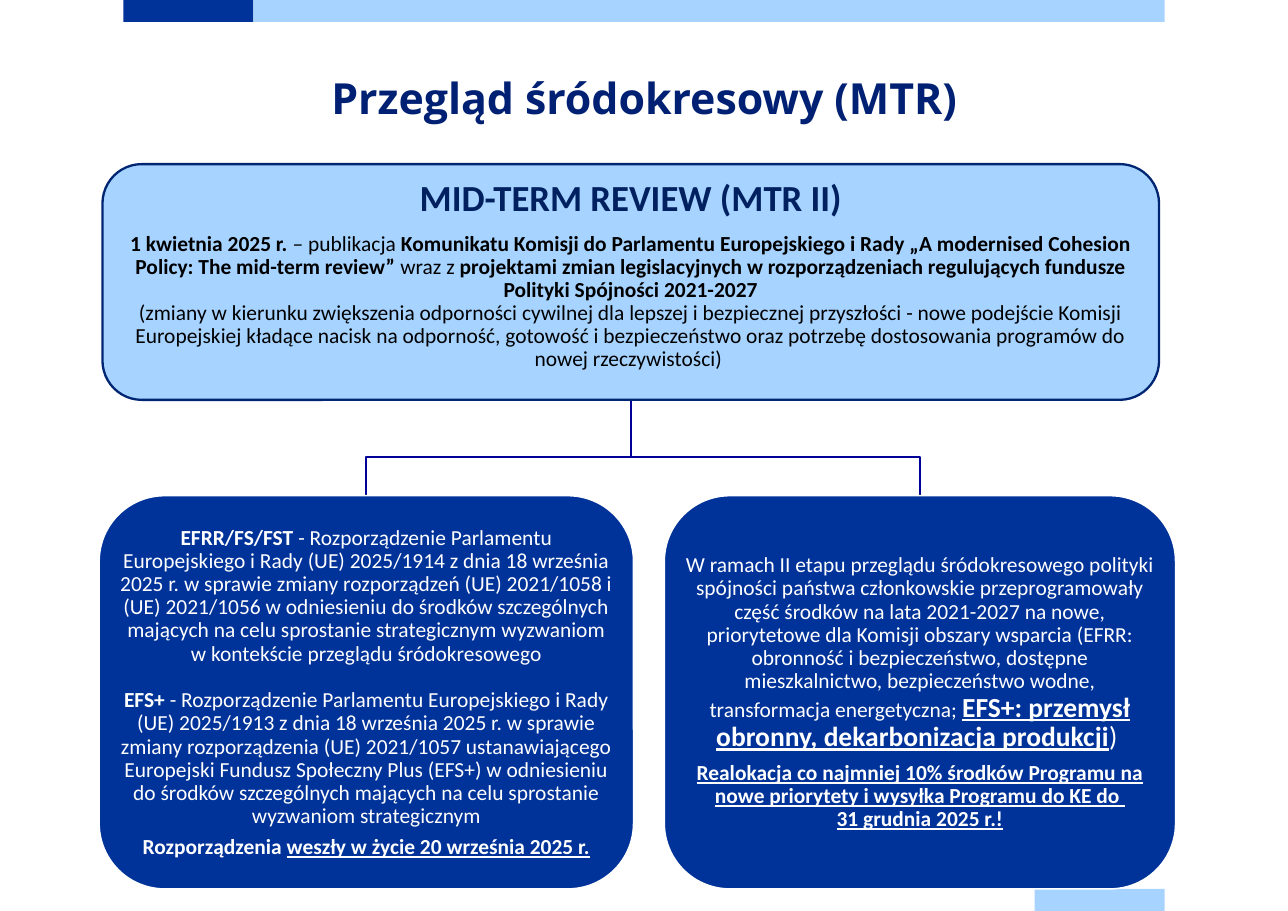
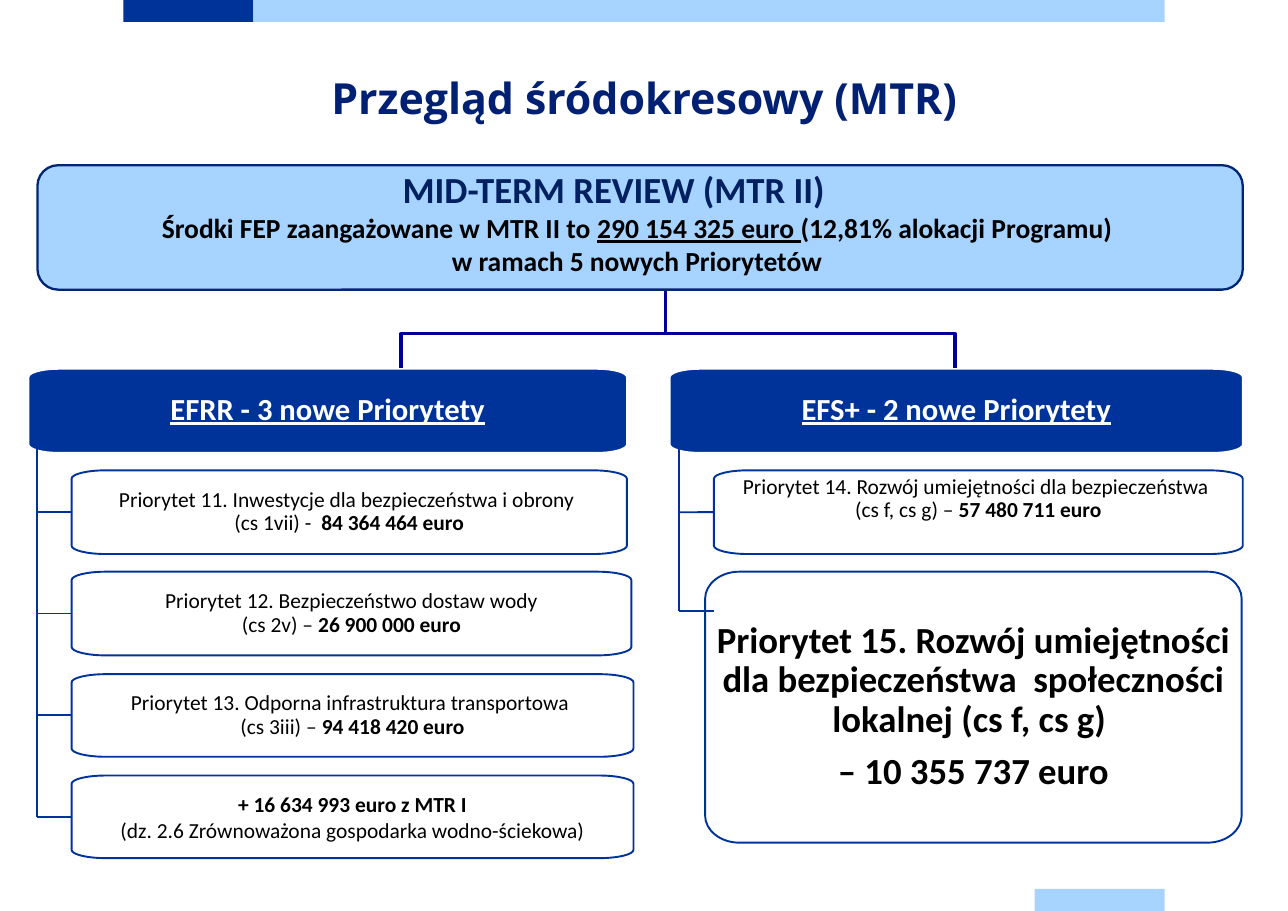
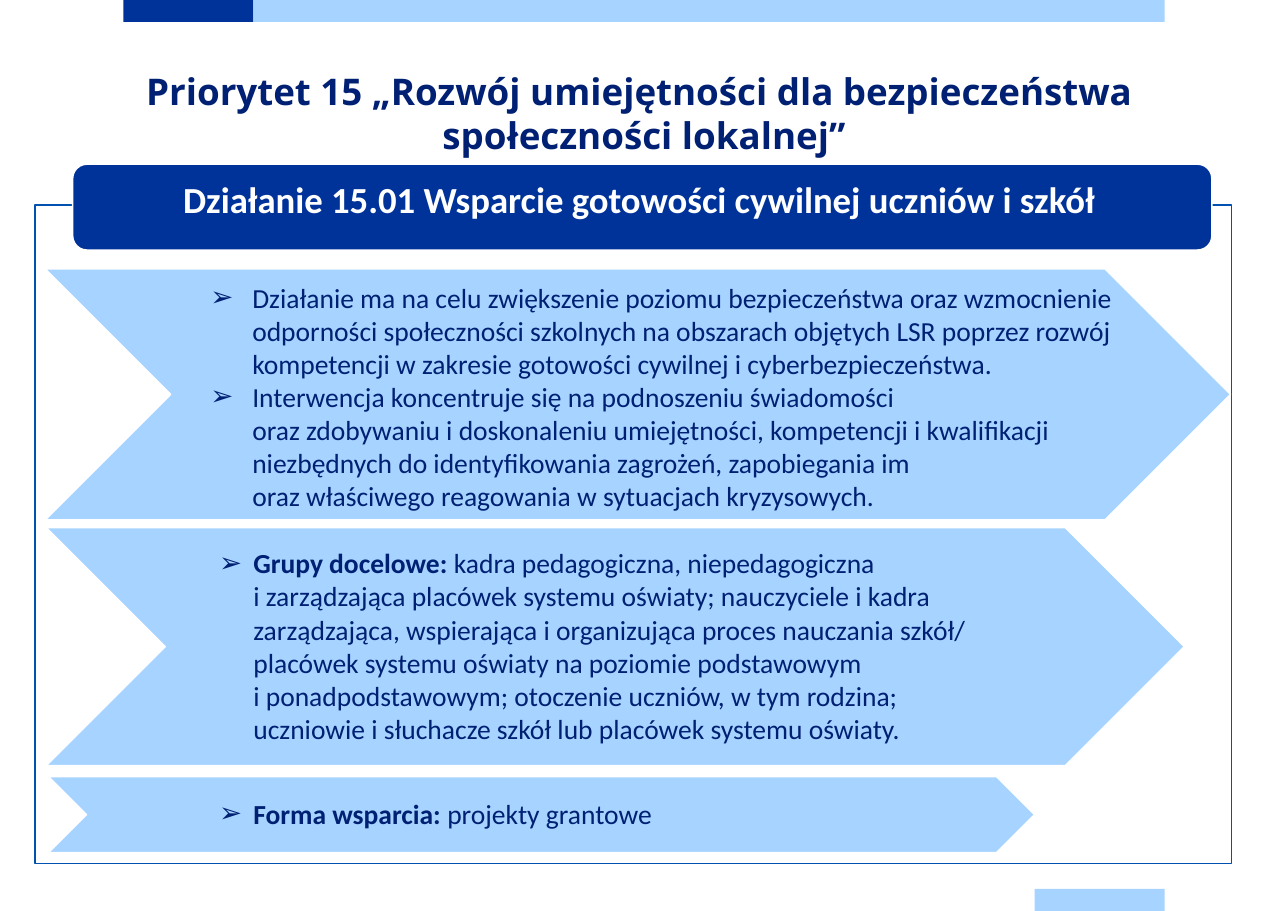
import copy
from dataclasses import dataclass

import lxml.etree
import pptx
import pptx.dml.color
import pptx.enum.shapes
import pptx.enum.text
import pptx.oxml
import pptx.oxml.ns
import pptx.util

Inches = pptx.util.Inches
Pt = pptx.util.Pt
qn = pptx.oxml.ns.qn
SHAPES = pptx.enum.shapes.MSO_SHAPE
ANCHOR = pptx.enum.text.MSO_ANCHOR
ALIGN = pptx.enum.text.PP_ALIGN


@dataclass(frozen=True)
class Theme:
    navy: str = "003399"
    sky: str = "A6D3FF"
    ink: str = "002073"
    heading: str = "002060"
    outline: str = "002673"
    tree: str = "000099"
    frame: str = "0051B0"
    black: str = "000000"
    white: str = "FFFFFF"
    body_font: str = "Calibri"
    title_font: str = "Open Sans"
    title: int = 28
    large: int = 24
    header: int = 20
    medium: int = 18
    body: int = 14


THEME = Theme()


@dataclass(frozen=True)
class Span:
    text: str
    bold: bool = False
    underline: bool = False
    size: int = THEME.body
    color: str = THEME.black
    font: str = THEME.body_font


@dataclass(frozen=True)
class Block:
    spans: tuple
    align: int = ALIGN.CENTER
    line_spacing: object = 0.9
    space_after: float = 0
    bullet_indent: float = 0


def rgb(color):
    return pptx.dml.color.RGBColor.from_string(color)


def add_bullet(paragraph, indent):
    properties = paragraph._p.get_or_add_pPr()
    properties.set("marL", str(Inches(indent)))
    properties.set("indent", str(-Inches(indent)))
    lxml.etree.SubElement(properties, qn("a:buFont")).set("typeface", THEME.body_font)
    lxml.etree.SubElement(properties, qn("a:buChar")).set("char", "➢")


def add_span(paragraph, span):
    for index, line in enumerate(span.text.split("\n")):
        if index:
            paragraph.add_line_break()
            line_break = paragraph._p.findall(qn("a:br"))[-1]
            line_break.append(copy.deepcopy(run._r.rPr))
        if index and not line:
            continue
        run = paragraph.add_run()
        run.text = line
        run.font.name = span.font
        run.font.size = Pt(span.size)
        run.font.bold = span.bold
        run.font.underline = span.underline
        run.font.color.rgb = rgb(span.color)


def write(shape, blocks, insets=(0.01, 0.01, 0.01, 0.01), anchor=ANCHOR.MIDDLE):
    frame = shape.text_frame
    frame.word_wrap = True
    frame.vertical_anchor = anchor
    frame.margin_left, frame.margin_top, frame.margin_right, frame.margin_bottom = map(Inches, insets)
    for index, block in enumerate(blocks):
        paragraph = frame.add_paragraph() if index else frame.paragraphs[0]
        paragraph.alignment = block.align
        paragraph.line_spacing = block.line_spacing
        paragraph.space_after = Pt(block.space_after)
        if block.bullet_indent:
            add_bullet(paragraph, block.bullet_indent)
        for span in block.spans:
            add_span(paragraph, span)


def paint(shape, fill, line=None, width=1):
    shape.shadow.inherit = False
    if fill:
        shape.fill.solid()
        shape.fill.fore_color.rgb = rgb(fill)
    else:
        shape.fill.background()
    if line:
        shape.line.color.rgb = rgb(line)
        shape.line.width = Pt(width)
    else:
        shape.line.fill.background()
    return shape


def add_box(slide, kind, place, fill, line=None, width=1):
    return paint(slide.shapes.add_shape(kind, *map(Inches, place)), fill, line, width)


def add_text(slide, place, blocks, **options):
    write(slide.shapes.add_textbox(*map(Inches, place)), blocks, **options)


def add_outline(slide, points, close):
    points = [(Inches(x), Inches(y)) for x, y in points]
    builder = slide.shapes.build_freeform(*points[0], scale=1.0)
    builder.add_line_segments(points[1:], close=close)
    return builder.convert_to_shape()


def round_corners(shape):
    vertices = list(shape._element.iter(qn("a:pt")))
    points = [(int(vertex.get("x")), int(vertex.get("y"))) for vertex in vertices]
    for index in range(1, 8, 2):
        start, end = points[index - 1], points[index]
        corner = (start[0], end[1]) if index % 4 == 1 else (end[0], start[1])
        controls = [[round(a + 0.55 * (c - a)) for a, c in zip(point, corner)] for point in (start, end)]
        segment = vertices[index].getparent()
        curve = lxml.etree.Element(qn("a:cubicBezTo"))
        for x, y in (*controls, end):
            vertex = lxml.etree.SubElement(curve, qn("a:pt"))
            vertex.set("x", str(x))
            vertex.set("y", str(y))
        segment.getparent().replace(segment, curve)


def add_card(slide, place, fill, line, width, radius):
    left, top, card_width, height = place
    rise = height / 10
    right, bottom = left + card_width, top + height
    card = add_outline(slide, [
        (left, top + rise), (left + radius, top), (right - radius, top), (right, top + rise),
        (right, bottom - rise), (right - radius, bottom), (left + radius, bottom), (left, bottom - rise),
    ], True)
    round_corners(card)
    return paint(card, fill, line, width)


def add_header(slide, place, text):
    card = add_card(slide, place, THEME.navy, THEME.white, 1, 0.27)
    span = Span(text, True, True, THEME.header, THEME.white)
    write(card, [Block((span,))], (0.11, 0.09, 0.11, 0.09))


def add_priority(slide, place, blocks, top_inset=0.06, anchor=ANCHOR.MIDDLE):
    card = add_card(slide, place, THEME.white, THEME.navy, 1.25, 0.31)
    write(card, blocks, (0.07, top_inset, 0.07, 0.06), anchor)
    return card


def add_line(slide, start, end, card=None):
    connector = slide.shapes.add_connector(
        pptx.enum.shapes.MSO_CONNECTOR.STRAIGHT, *map(Inches, (*start, *end)))
    connector.line.color.rgb = rgb(THEME.navy)
    connector.line.width = Pt(1.25)
    lxml.etree.SubElement(connector._element.spPr, qn("a:effectLst"))
    if card is not None:
        connector.end_connect(card, 1)


def add_tree(slide, trunk, top, branches, width):
    for branch in branches:
        points = [(trunk, top), (trunk, top + 0.53), (branch, top + 0.53), (branch, top + 0.88)]
        paint(add_outline(slide, points, False), None, THEME.tree, width)


def add_arrow(slide, place, text_place, blocks):
    add_box(slide, SHAPES.CHEVRON, place, THEME.sky, THEME.white)
    add_text(slide, text_place, blocks, insets=(0.16, 0.05, 0.05, 0.05))


def bullet_block(indent, label, text):
    spans = [Span(label, True, size=THEME.medium, color=THEME.ink)] if label else []
    spans.append(Span(text, size=THEME.medium, color=THEME.ink))
    return Block(tuple(spans), ALIGN.LEFT, 1.0, 0, indent)


def new_slide(presentation, title, size=THEME.title, line_spacing=Pt(36)):
    slide = presentation.slides.add_slide(presentation.slide_layouts[6])
    for place, color in (((1.12, 0, 1.18, 0.2), THEME.navy),
                         ((2.3, 0, 8.27, 0.2), THEME.sky),
                         ((9.39, 8.07, 1.18, 0.2), THEME.sky)):
        add_box(slide, SHAPES.RECTANGLE, place, color)
    span = Span(title, True, size=size, color=THEME.ink, font=THEME.title_font)
    add_text(slide, (1.12, 0.62, 9.45, 1.08), [Block((span,), line_spacing=line_spacing)],
             insets=(0, 0, 0, 0), anchor=ANCHOR.TOP)
    return slide


def headline():
    return Span("MID-TERM REVIEW (MTR II)", True, size=THEME.large, color=THEME.heading)


def build_regulations(presentation):
    slide = new_slide(presentation, "Przegląd śródokresowy (MTR)")
    add_tree(slide, 5.73, 3.62, (8.35, 3.32), 1.5)
    review = add_box(slide, SHAPES.ROUNDED_RECTANGLE, (0.93, 1.49, 9.59, 2.14),
                     THEME.sky, THEME.outline, 1.5)
    write(review, [
        Block((headline(),), space_after=8.4),
        Block((
            Span("1 kwietnia 2025 r.", True),
            Span(" – publikacja "),
            Span("Komunikatu Komisji do Parlamentu Europejskiego i Rady „A modernised Cohesion Policy: "
                 "The mid-term review”", True),
            Span(" wraz z "),
            Span("projektami zmian legislacyjnych w rozporządzeniach regulujących fundusze "
                 "Polityki Spójności 2021-2027\n", True),
            Span("(zmiany w kierunku zwiększenia odporności cywilnej dla lepszej i bezpiecznej przyszłości "
                 "- nowe podejście Komisji Europejskiej kładące nacisk na odporność, gotowość "
                 "i bezpieczeństwo oraz potrzebę dostosowania programów do nowej rzeczywistości) "))),
    ], (0.01, 0.04, 0.01, 0.01), ANCHOR.TOP)

    def white(text, bold=False, underline=False, size=THEME.body):
        return Span(text, bold, underline, size, THEME.white)

    regulations = [
        Block((white("EFRR/FS/FST ", True),
               white("- Rozporządzenie Parlamentu Europejskiego i Rady (UE) 2025/1914 z dnia 18 września "
                     "2025 r. w sprawie zmiany rozporządzeń (UE) 2021/1058 i (UE) 2021/1056 w odniesieniu "
                     "do środków szczególnych mających na celu sprostanie strategicznym wyzwaniom "
                     "w kontekście przeglądu śródokresowego")), space_after=15.4),
        Block((white("EFS+ ", True),
               white("- Rozporządzenie Parlamentu Europejskiego i Rady (UE) 2025/1913 z dnia 18 września "
                     "2025 r. w sprawie zmiany rozporządzenia (UE) 2021/1057 ustanawiającego Europejski "
                     "Fundusz Społeczny Plus (EFS+) w odniesieniu do środków szczególnych mających na celu "
                     "sprostanie wyzwaniom strategicznym")), space_after=4.9),
        Block((white("Rozporządzenia ", True), white("weszły w życie 20 września 2025 r.", True, True))),
    ]
    reallocation = [
        Block((white("W ramach II etapu przeglądu śródokresowego polityki spójności państwa członkowskie "
                     "przeprogramowały część środków na lata 2021-2027 na nowe, priorytetowe dla Komisji "
                     "obszary wsparcia (EFRR: obronność i bezpieczeństwo, dostępne mieszkalnictwo, "
                     "bezpieczeństwo wodne, transformacja energetyczna; "),
               white("EFS+: przemysł obronny, dekarbonizacja produkcji", True, True, THEME.medium),
               white(") ", size=THEME.medium)), space_after=6),
        Block((white("Realokacja co najmniej 10% środków Programu na nowe priorytety i wysyłka Programu "
                     "do KE do \n31 grudnia 2025 r.!", True, True),)),
    ]
    for left, width, blocks in ((0.9, 4.85, regulations), (6.03, 4.64, reallocation)):
        box = add_box(slide, SHAPES.ROUNDED_RECTANGLE, (left, 4.5, width, 3.57), THEME.navy, THEME.white)
        write(box, blocks, (0.01, 0.02, 0.01, 0.01))


def build_priorities(presentation):
    slide = new_slide(presentation, "Przegląd śródokresowy (MTR)")
    add_tree(slide, 6.04, 2.5, (3.64, 8.67), 2.25)
    funds = add_box(slide, SHAPES.ROUNDED_RECTANGLE, (0.34, 1.5, 10.94, 1.13),
                    THEME.sky, THEME.outline, 1.5)
    write(funds, [Block((
        Span("Środki FEP zaangażowane w MTR II to ", True, size=THEME.medium),
        Span("290 154 325 euro ", True, True, THEME.medium),
        Span("(12,81% alokacji Programu) \nw ramach 5 nowych Priorytetów ", True, size=THEME.medium),
    ), line_spacing=1.0)], (0.01, 0.36, 0.01, 0.01), ANCHOR.TOP)
    add_text(slide, (0.42, 1.51, 10.3, 0.41), [Block((headline(),), line_spacing=1.0)],
             insets=(0, 0, 0, 0), anchor=ANCHOR.TOP)

    add_header(slide, (0.26, 3.35, 5.43, 0.76), "EFRR - 3 nowe Priorytety")
    add_header(slide, (6.08, 3.35, 5.2, 0.76), "EFS+ - 2 nowe Priorytety")

    regional = (
        (4.27, 5.04, 0.76, Span("Priorytet 11. Inwestycje dla bezpieczeństwa i obrony \n(cs 1vii) -  "),
         Span("84 364 464 euro", True), 0.9),
        (5.19, 5.08, 0.76, Span("Priorytet 12. Bezpieczeństwo dostaw wody\n(cs 2v) – "),
         Span("26 900 000 euro", True), 0.9),
        (6.12, 5.1, 0.75, Span("Priorytet 13. Odporna infrastruktura transportowa \n(cs 3iii) – "),
         Span("94 418 420 euro", True), 0.9),
        (7.04, 5.1, 0.75, Span("+ 16 634 993 euro z MTR I\n", True),
         Span("(dz. 2.6 Zrównoważona gospodarka wodno-ściekowa)"), 1.0),
    )
    for top, width, height, first, second, spacing in regional:
        card = add_priority(slide, (0.65, top, width, height),
                            [Block((first, second), line_spacing=spacing)])
        middle = top + height / 2
        add_line(slide, (0.34, middle), (0.65, middle), card)

    skills = add_priority(slide, (6.48, 4.27, 4.8, 0.76), [Block((
        Span("Priorytet 14. Rozwój umiejętności dla bezpieczeństwa \n(cs f, cs g) – "),
        Span("57 480 711 euro", True)))], 0.05, ANCHOR.TOP)
    add_line(slide, (6.16, 4.65), (6.48, 4.65), skills)
    add_priority(slide, (6.4, 5.19, 4.87, 2.46), [
        Block((Span("Priorytet 15. Rozwój umiejętności dla bezpieczeństwa  społeczności lokalnej "
                    "(cs f, cs g) ", True, size=THEME.large),), space_after=8.4),
        Block((Span("– 10 355 737 euro", True, size=THEME.large),)),
    ])
    add_line(slide, (6.16, 5.55), (6.48, 5.55))
    add_line(slide, (0.34, 3.71), (0.34, 7.42))
    add_line(slide, (6.16, 3.73), (6.16, 5.55))


def build_measure(presentation):
    slide = new_slide(presentation, "Priorytet 15 „Rozwój umiejętności dla bezpieczeństwa  "
                      "społeczności lokalnej”", THEME.large, 1.0)
    add_box(slide, SHAPES.RECTANGLE, (0.32, 1.86, 10.86, 5.98), THEME.white, THEME.frame)
    measure = add_box(slide, SHAPES.ROUNDED_RECTANGLE, (0.66, 1.49, 10.34, 0.78),
                      THEME.navy, THEME.white)
    write(measure, [Block((Span("Działanie 15.01 Wsparcie gotowości cywilnej uczniów i szkół ", True,
                                size=THEME.large, color=THEME.white),), line_spacing=1.0)],
          (0.28, 0, 0.26, 0.15))
    add_arrow(slide, (0.41, 2.44, 10.76, 2.28), (1.75, 2.45, 8.99, 2.3), [
        bullet_block(0.38, "", "Działanie ma na celu zwiększenie poziomu bezpieczeństwa oraz wzmocnienie "
                     "odporności społeczności szkolnych na obszarach objętych LSR poprzez rozwój "
                     "kompetencji w zakresie gotowości cywilnej i cyberbezpieczeństwa."),
        bullet_block(0.38, "", "Interwencja koncentruje się na podnoszeniu świadomości \n"
                     "oraz zdobywaniu i doskonaleniu umiejętności, kompetencji i kwalifikacji "
                     "niezbędnych do identyfikowania zagrożeń, zapobiegania im \n"
                     "oraz właściwego reagowania w sytuacjach kryzysowych."),
    ])
    add_arrow(slide, (0.42, 4.79, 10.33, 2.16), (1.83, 4.72, 8.74, 2.28), [
        bullet_block(0.31, "Grupy docelowe: ", "kadra pedagogiczna, niepedagogiczna \n"
                     "i zarządzająca placówek systemu oświaty; nauczyciele i kadra \n"
                     "zarządzająca, wspierająca i organizująca proces nauczania szkół/ \n"
                     "placówek systemu oświaty na poziomie podstawowym \n"
                     "i ponadpodstawowym; otoczenie uczniów, w tym rodzina; \n"
                     "uczniowie i słuchacze szkół lub placówek systemu oświaty."),
    ])
    add_arrow(slide, (0.44, 7.05, 8.95, 0.69), (1.83, 7.02, 7.57, 0.72),
              [bullet_block(0.31, "Forma wsparcia:", " projekty grantowe")])


def main():
    presentation = pptx.Presentation()
    presentation.slide_width = Inches(11.69)
    presentation.slide_height = Inches(8.27)
    build_regulations(presentation)
    build_priorities(presentation)
    build_measure(presentation)
    presentation.save("out.pptx")


if __name__ == "__main__":
    main()
